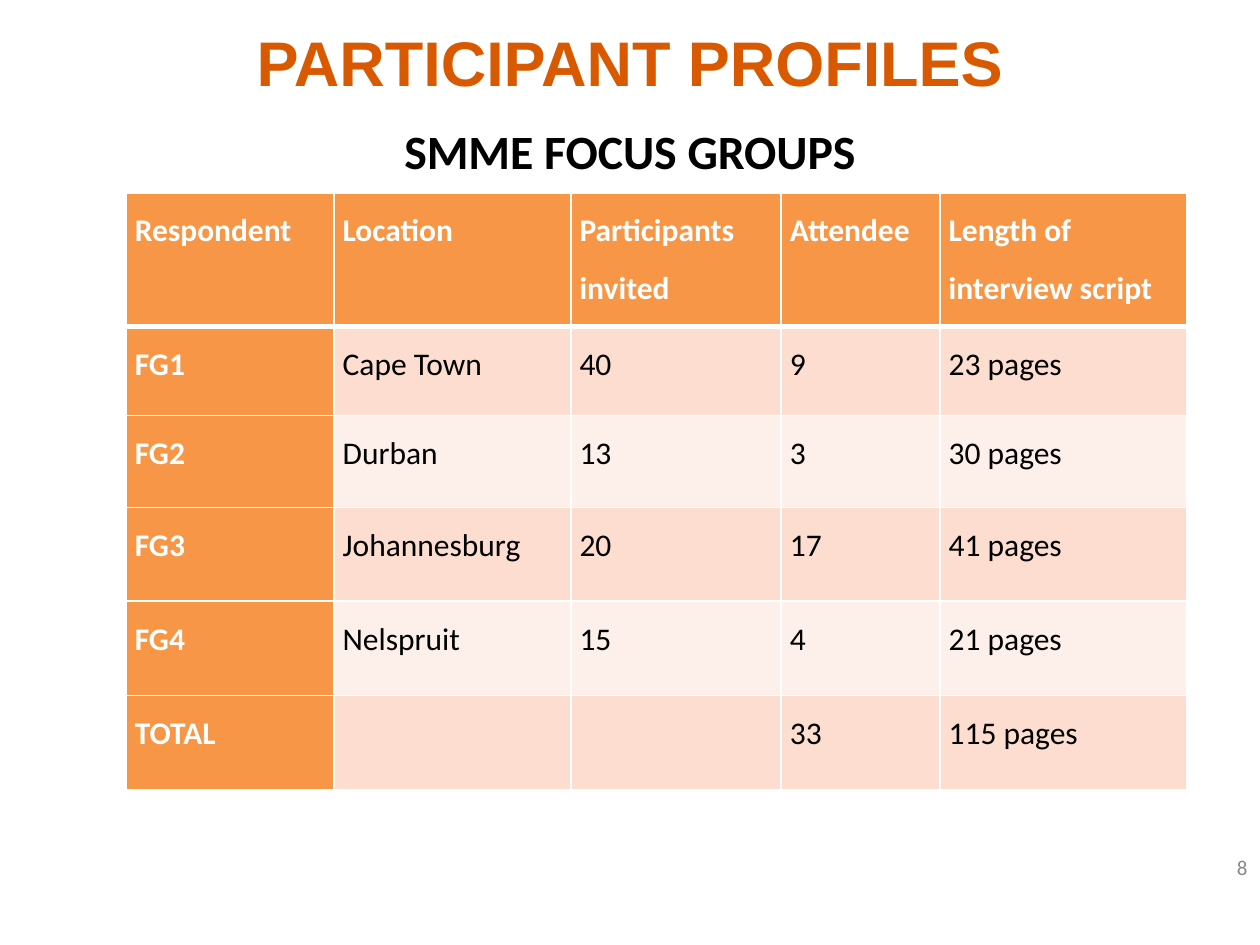
from lxml.etree import SubElement
from pptx import Presentation
from pptx.dml.color import RGBColor
from pptx.enum.text import MSO_ANCHOR, PP_ALIGN
from pptx.oxml.ns import qn
from pptx.util import Inches, Pt

TITLE = "PARTICIPANT PROFILES"
SUBTITLE = "SMME FOCUS GROUPS"
PAGE = "8"
ROWS = [
    ("Respondent", "Location", "Participants invited", "Attendee", "Length of interview script"),
    ("FG1", "Cape Town", "40", "9", "23 pages"),
    ("FG2", "Durban", "13", "3", "30 pages"),
    ("FG3", "Johannesburg", "20", "17", "41 pages"),
    ("FG4", "Nelspruit", "15", "4", "21 pages"),
    ("TOTAL", "", "", "33", "115 pages"),
]
COL_WIDTHS = (1.65, 1.88, 1.67, 1.26, 1.96)
ROW_HEIGHTS = (1.06, 0.71, 0.73, 0.74, 0.75, 0.75)


class Theme:
    heading_font, body_font = "Arial", "Calibri"
    title_size, subtitle_size, table_size, page_size = 36, 27.3, 18, 12
    title, text, page = "D95900", "000000", "898989"
    accent, on_accent, border = "F79646", "FFFFFF", "FFFFFF"
    bands = ("FDEFE9", "FCDDCF")
    thin, thick = 1, 3


def put_text(tf, text, size, color, font=Theme.body_font, bold=False,
             align=PP_ALIGN.LEFT, spacing=None):
    p = tf.paragraphs[0]
    p.alignment = align
    if spacing:
        p.line_spacing = spacing
    r = p.add_run()
    r.text = text
    r.font.name, r.font.size, r.font.bold = font, Pt(size), bold
    r.font.color.rgb = RGBColor.from_string(color)


def place(shape, left, top, width, height):
    shape.left, shape.top = Inches(left), Inches(top)
    shape.width, shape.height = Inches(width), Inches(height)
    shape.text_frame.word_wrap = True
    shape.text_frame.vertical_anchor = MSO_ANCHOR.MIDDLE
    return shape.text_frame


def set_borders(cell, top, bottom):
    """Draw all four cell edges; call before filling, as the schema wants lines first."""
    widths = {"a:lnL": Theme.thin, "a:lnR": Theme.thin, "a:lnT": top, "a:lnB": bottom}
    tc_pr = cell._tc.get_or_add_tcPr()
    for tag, width in widths.items():
        ln = SubElement(tc_pr, qn(tag), w=str(Pt(width)))
        fill = SubElement(ln, qn("a:solidFill"))
        SubElement(fill, qn("a:srgbClr"), val=Theme.border)


def add_profile_table(s, left, top):
    table = s.shapes.add_table(
        len(ROWS), len(COL_WIDTHS), Inches(left), Inches(top),
        Inches(sum(COL_WIDTHS)), Inches(sum(ROW_HEIGHTS))).table
    for col, width in zip(table.columns, COL_WIDTHS):
        col.width = Inches(width)
    for row, height in zip(table.rows, ROW_HEIGHTS):
        row.height = Inches(height)
    for i, values in enumerate(ROWS):
        for j, value in enumerate(values):
            cell = table.cell(i, j)
            heading = i == 0 or j == 0
            cell.margin_left = cell.margin_right = Inches(0.07)
            cell.margin_top = cell.margin_bottom = 0
            set_borders(cell, Theme.thick if i == 1 else Theme.thin,
                        Theme.thick if i == 0 else Theme.thin)
            cell.fill.solid()
            cell.fill.fore_color.rgb = RGBColor.from_string(
                Theme.accent if heading else Theme.bands[i % 2])
            if value:
                put_text(cell.text_frame, value, Theme.table_size,
                         Theme.on_accent if heading else Theme.text, bold=heading,
                         align=PP_ALIGN.JUSTIFY if i else PP_ALIGN.LEFT, spacing=1.5)


def main():
    prs = Presentation()
    prs.slide_width, prs.slide_height = Inches(10), Inches(7.5)
    s = prs.slides.add_slide(prs.slide_layouts[5])
    put_text(place(s.shapes.title, 0, 0, 10, 0.97), TITLE, Theme.title_size, Theme.title,
             font=Theme.heading_font, bold=True, align=PP_ALIGN.CENTER)
    page = s.shapes.add_textbox(0, 0, 0, 0)
    put_text(place(page, 9.53, 6.68, 0.47, 0.4), PAGE, Theme.page_size, Theme.page,
             align=PP_ALIGN.RIGHT)
    subtitle = s.shapes.add_textbox(0, 0, 0, 0)
    put_text(place(subtitle, 0, 0.71, 10, 0.97), SUBTITLE, Theme.subtitle_size, Theme.text,
             bold=True, align=PP_ALIGN.CENTER)
    add_profile_table(s, 1, 1.53)
    prs.save("out.pptx")


if __name__ == "__main__":
    main()
